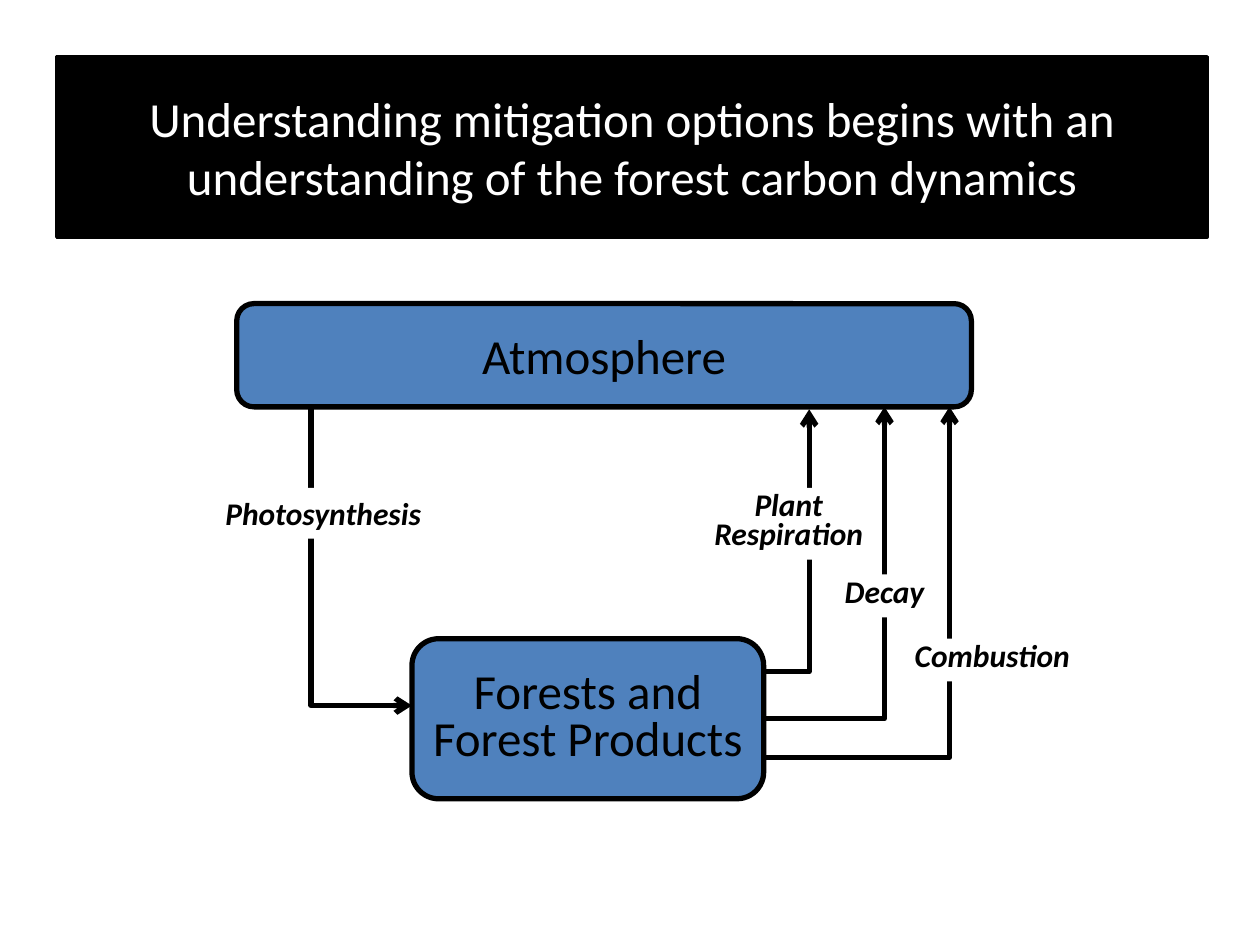
"""Build a slide showing carbon flows between the atmosphere and forests."""
from dataclasses import dataclass

from lxml.etree import SubElement
from pptx import Presentation
from pptx.dml.color import RGBColor
from pptx.enum.shapes import MSO_SHAPE
from pptx.enum.text import MSO_ANCHOR, MSO_AUTO_SIZE, PP_ALIGN
from pptx.oxml.ns import qn
from pptx.util import Pt


@dataclass(frozen=True)
class Theme:
    font: str = "Calibri"
    heading_size: float = 28
    label_size: float = 18
    title_line: float = 2
    line: float = 3
    black: RGBColor = RGBColor(0, 0, 0)
    white: RGBColor = RGBColor(255, 255, 255)
    blue: RGBColor = RGBColor(0x4F, 0x81, 0xBD)


@dataclass(frozen=True)
class Box:
    text: str
    left: float
    top: float
    width: float
    height: float
    spacing: float = 1.0

    @property
    def right(self) -> float:
        return self.left + self.width

    @property
    def bottom(self) -> float:
        return self.top + self.height

    @property
    def frame(self) -> tuple:
        return tuple(Pt(value) for value in (self.left, self.top, self.width, self.height))


@dataclass(frozen=True)
class Flow:
    start: tuple[float, float]
    corner: tuple[float, float]
    end: tuple[float, float]


THEME = Theme()
TITLE = Box("Understanding mitigation options begins with an understanding "
            "of the forest carbon dynamics", 32.4, 32.4, 657.4, 103)
ATMOSPHERE = Box("Atmosphere", 135.3, 173.5, 419.8, 59)
FORESTS = Box("Forests and Forest Products", 235.4, 365, 201, 91.5, 0.8)
LABELS = (
    Box("Photosynthesis", 121, 278.8, 127.4, 29),
    Box("Plant\nRespiration", 400.3, 278.8, 100.8, 41, 0.75),
    Box("Decay", 475.2, 328.3, 60.5, 24.5, 0.75),
    Box("Combustion", 514.8, 365, 104.4, 24.5, 0.75),
)
UPTAKE_X, UPTAKE_Y = 177.8, 403.2
RELEASES = ((462.4, 383.6, 1.4), (505.4, 410.6, 0), (542.6, 432.8, 0))


def write_text(shape, box: Box, size: float, color: RGBColor, bold_italic: bool = False) -> None:
    """Fill a shape with centred paragraphs."""
    frame = shape.text_frame
    frame.text = box.text
    for paragraph in frame.paragraphs:
        paragraph.alignment = PP_ALIGN.CENTER
        paragraph.line_spacing = box.spacing
        font = paragraph.font
        font.name = THEME.font
        font.size = Pt(size)
        font.color.rgb = color
        font.bold = font.italic = bold_italic


def paint(shape, fill: RGBColor, line_width: float) -> None:
    """Give a shape a solid fill and a black outline."""
    shape.fill.solid()
    shape.fill.fore_color.rgb = fill
    shape.line.color.rgb = THEME.black
    shape.line.width = Pt(line_width)


def place_title(slide, box: Box) -> None:
    """Move and format the title placeholder."""
    title = slide.shapes.title
    title.left, title.top, title.width, title.height = box.frame
    paint(title, THEME.black, THEME.title_line)
    write_text(title, box, THEME.heading_size, THEME.white)
    title.text_frame.auto_size = MSO_AUTO_SIZE.NONE
    title.text_frame.vertical_anchor = MSO_ANCHOR.MIDDLE


def draw_pool(slide, box: Box) -> None:
    """Draw a rounded carbon pool."""
    shape = slide.shapes.add_shape(MSO_SHAPE.ROUNDED_RECTANGLE, *box.frame)
    shape.shadow.inherit = False
    paint(shape, THEME.blue, THEME.line)
    write_text(shape, box, THEME.heading_size, THEME.black)
    shape.text_frame.word_wrap = True
    shape.text_frame.vertical_anchor = MSO_ANCHOR.MIDDLE


def draw_flow(slide, flow: Flow) -> None:
    """Draw a bent line with an arrowhead at its end."""
    points = [(Pt(x), Pt(y)) for x, y in (flow.start, flow.corner, flow.end)]
    builder = slide.shapes.build_freeform(*points[0])
    builder.add_line_segments(points[1:], close=False)
    shape = builder.convert_to_shape()
    shape.shadow.inherit = False
    shape.fill.background()
    shape.line.color.rgb = THEME.black
    shape.line.width = Pt(THEME.line)
    SubElement(shape.line._get_or_add_ln(), qn("a:tailEnd"), type="arrow")


def draw_label(slide, box: Box) -> None:
    """Draw a white label that interrupts its flow line."""
    label = slide.shapes.add_textbox(*box.frame)
    label.fill.solid()
    label.fill.fore_color.rgb = THEME.white
    write_text(label, box, THEME.label_size, THEME.black, bold_italic=True)
    label.text_frame.word_wrap = False
    label.text_frame.auto_size = MSO_AUTO_SIZE.SHAPE_TO_FIT_TEXT


def main() -> None:
    """Create and save the presentation."""
    presentation = Presentation()
    presentation.slide_width, presentation.slide_height = Pt(720), Pt(540)
    slide = presentation.slides.add_slide(presentation.slide_layouts[5])
    place_title(slide, TITLE)
    for pool in (ATMOSPHERE, FORESTS):
        draw_pool(slide, pool)
    release_x = FORESTS.right + 1.4
    flows = [Flow((release_x, y), (x, y), (x, ATMOSPHERE.bottom + gap))
             for x, y, gap in RELEASES]
    flows.append(Flow((UPTAKE_X, ATMOSPHERE.bottom), (UPTAKE_X, UPTAKE_Y),
                      (FORESTS.left, UPTAKE_Y)))
    for flow in flows:
        draw_flow(slide, flow)
    for label in LABELS:
        draw_label(slide, label)
    presentation.save("out.pptx")


if __name__ == "__main__":
    main()
